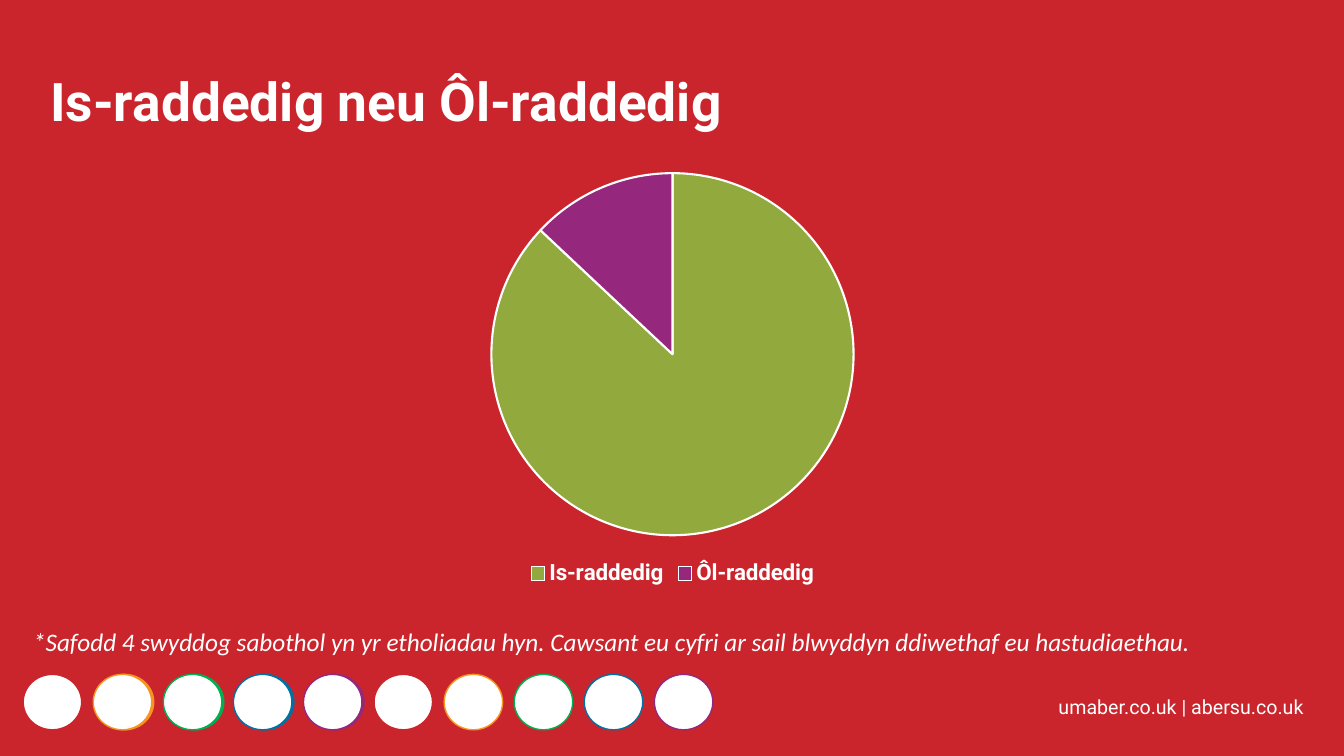
import pptx
import pptx.chart.data
import pptx.dml.color
import pptx.enum.chart
import pptx.enum.shapes
import pptx.enum.text
import pptx.util

Inches = pptx.util.Inches
Pt = pptx.util.Pt
RGBColor = pptx.dml.color.RGBColor

RED = RGBColor(0xCA, 0x25, 0x2C)
ORANGE = RGBColor(0xF7, 0x94, 0x1F)
GREEN = RGBColor(0x00, 0xAF, 0x50)
BLUE = RGBColor(0x01, 0x71, 0xA3)
PURPLE = RGBColor(0x95, 0x27, 0x7D)
OLIVE = RGBColor(0x92, 0xA9, 0x3D)
WHITE = RGBColor(0xFF, 0xFF, 0xFF)

RING_COLOURS = (RED, ORANGE, GREEN, BLUE, PURPLE)
RING_STEP = 0.695

TITLE_FONT = {"name": "Roboto", "size": Pt(38), "bold": True}
CHART_FONT = {"name": "Roboto", "size": Pt(16), "bold": True}
NOTE_FONT = {"name": "Calibri", "size": Pt(18), "italic": True}
ADDRESS_FONT = {"name": "Roboto", "size": Pt(14)}


def format_font(font, values):
    for attribute, value in values.items():
        setattr(font, attribute, value)
    font.color.rgb = WHITE


def place(part, left, top, width, height):
    box = {"left": left, "top": top, "width": width, "height": height}
    for attribute, value in box.items():
        setattr(part, attribute, Inches(value))


def write(part, text, font_values):
    frame = part.text_frame
    frame.word_wrap = True
    frame.vertical_anchor = pptx.enum.text.MSO_ANCHOR.TOP
    paragraph = frame.paragraphs[0]
    paragraph.alignment = pptx.enum.text.PP_ALIGN.LEFT
    run = paragraph.add_run()
    run.text = text
    format_font(run.font, font_values)
    return paragraph


def add_title(slide, text):
    title = slide.shapes.title
    place(title, 0.4, 0.7, 11.42, 0.88)
    title.text_frame.auto_size = pptx.enum.text.MSO_AUTO_SIZE.NONE
    write(title, text, TITLE_FONT).line_spacing = 0.9


def add_label(slide, text, box, font_values):
    label = slide.shapes.add_textbox(*(Inches(length) for length in box))
    write(label, text, font_values)


def add_ring_row(slide, left, fill=None):
    """Draw one ring per colour, filled with its own colour by default."""
    for index, colour in enumerate(RING_COLOURS):
        ring = slide.shapes.add_shape(
            pptx.enum.shapes.MSO_SHAPE.OVAL,
            Inches(left + index * RING_STEP), Inches(6.69),
            Inches(0.58), Inches(0.55))
        ring.shadow.inherit = False
        ring.fill.solid()
        ring.fill.fore_color.rgb = fill or colour
        ring.line.color.rgb = colour
        ring.line.width = Pt(1)


def add_degree_pie(slide, shares):
    data = pptx.chart.data.CategoryChartData()
    data.categories = list(shares)
    data.add_series("Series 1", [share for share, _ in shares.values()])
    pie = slide.shapes.add_chart(
        pptx.enum.chart.XL_CHART_TYPE.PIE,
        Inches(1.11), Inches(1.58), Inches(11.12), Inches(4.28), data).chart
    pie.has_title = False
    format_font(pie.font, CHART_FONT)

    # Legend under the pie
    pie.has_legend = True
    pie.legend.position = pptx.enum.chart.XL_LEGEND_POSITION.BOTTOM
    pie.legend.include_in_layout = False
    format_font(pie.legend.font, CHART_FONT)

    # Slices with white edges
    plot = pie.plots[0]
    plot.vary_by_categories = True
    for index, (_, colour) in enumerate(shares.values()):
        slice_format = plot.series[0].points[index].format
        slice_format.fill.solid()
        slice_format.fill.fore_color.rgb = colour
        slice_format.line.color.rgb = WHITE
        slice_format.line.width = Pt(1.5)


def main():
    deck = pptx.Presentation()
    deck.slide_width = Inches(13.33)
    deck.slide_height = Inches(7.5)
    slide = deck.slides.add_slide(deck.slide_layouts[5])
    slide.background.fill.solid()
    slide.background.fill.fore_color.rgb = RED

    # Footer: coloured rings behind the first white row, then a second row
    add_ring_row(slide, 0.25)
    add_ring_row(slide, 0.23, WHITE)
    add_ring_row(slide, 3.71, WHITE)
    add_label(slide, "umaber.co.uk | abersu.co.uk",
              (10.4, 6.84, 2.8, 0.34), ADDRESS_FONT)

    # Content
    add_title(slide, "Is-raddedig neu Ôl-raddedig")
    add_degree_pie(slide, {"Is-raddedig": (87, OLIVE),
                           "Ôl-raddedig": (13, PURPLE)})
    add_label(slide,
              "*Safodd 4 swyddog sabothol yn yr etholiadau hyn. Cawsant eu "
              "cyfri ar sail blwyddyn ddiwethaf eu hastudiaethau.",
              (0.23, 6.16, 12.62, 0.4), NOTE_FONT)

    deck.save("out.pptx")


if __name__ == "__main__":
    main()
